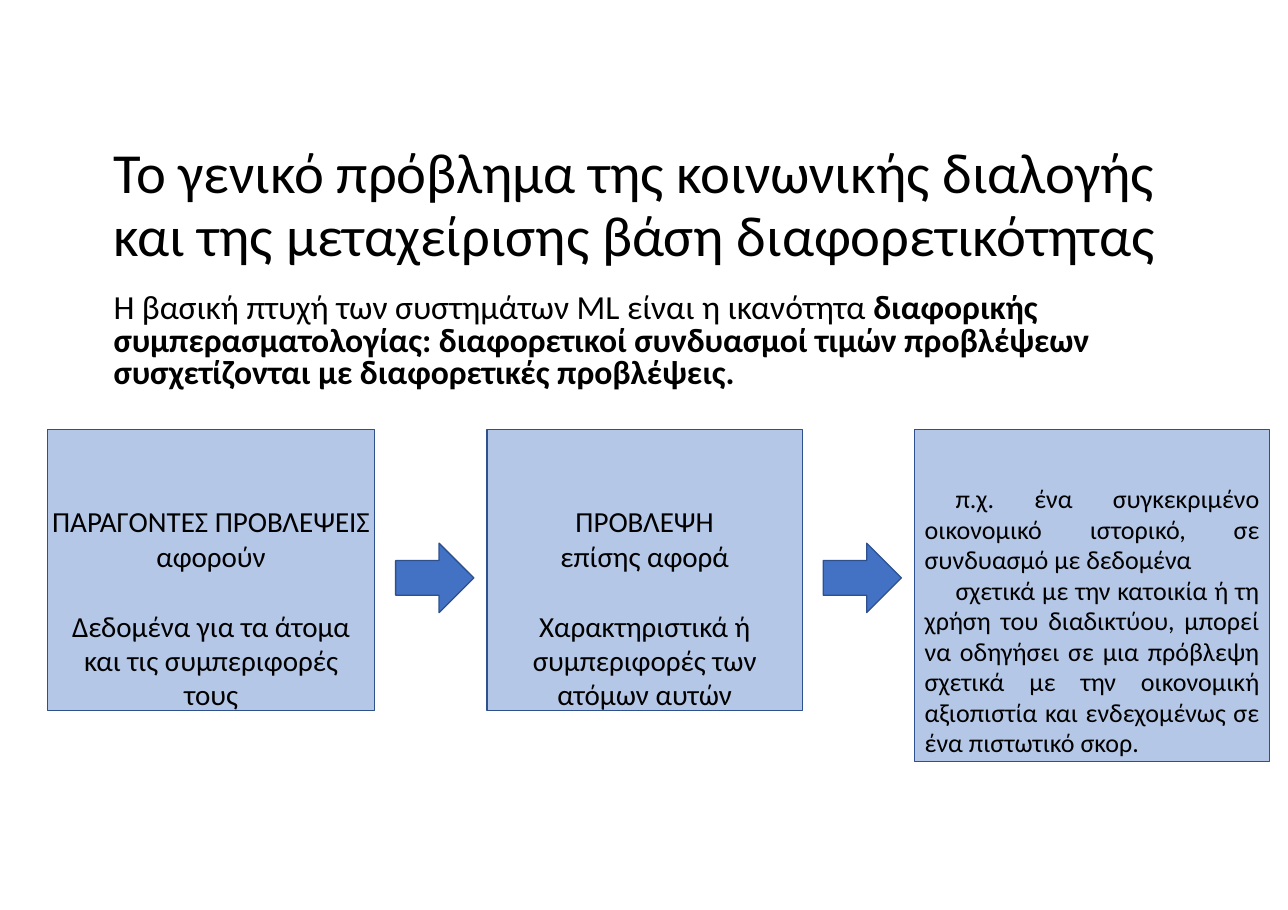
"""Build the slide on social sorting and prediction in ML systems."""
from dataclasses import dataclass

from pptx import Presentation
from pptx.dml.color import RGBColor
from pptx.enum.shapes import MSO_SHAPE
from pptx.enum.text import MSO_ANCHOR, MSO_AUTO_SIZE, PP_ALIGN
from pptx.util import Inches, Pt

RECTANGLE, ARROW = MSO_SHAPE.RECTANGLE, MSO_SHAPE.RIGHT_ARROW
LEFT, CENTER, JUSTIFY = PP_ALIGN.LEFT, PP_ALIGN.CENTER, PP_ALIGN.JUSTIFY
TOP, NO_FIT = MSO_ANCHOR.TOP, MSO_AUTO_SIZE.NONE

HEADLINE = "Το γενικό πρόβλημα της κοινωνικής διαλογής και της μεταχείρισης βάση διαφορετικότητας"
KEY_POINT = [
    ("Η βασική πτυχή των συστημάτων ML είναι η ικανότητα ", False),
    ("διαφορικής συμπερασματολογίας: διαφορετικοί συνδυασμοί τιμών προβλέψεων "
     "συσχετίζονται με διαφορετικές προβλέψεις.", True),
]
STAGES = [
    {"columns": 25.41, "margin": 0.2, "lines": [
        "ΠΑΡΑΓΟΝΤΕΣ ΠΡΟΒΛΕΨΕΙΣ", "αφορούν",
        "Δεδομένα για τα άτομα και τις συμπεριφορές τους"]},
    {"columns": 24.47, "margin": 0.24, "lines": [
        "ΠΡΟΒΛΕΨΗ", "επίσης αφορά",
        "Χαρακτηριστικά ή συμπεριφορές των ατόμων αυτών"]},
]
EXAMPLE_COLUMNS = 27.54
EXAMPLE = [
    "π.χ. ένα συγκεκριμένο οικονομικό ιστορικό, σε συνδυασμό με δεδομένα",
    "σχετικά με την κατοικία ή τη χρήση του διαδικτύου, μπορεί να οδηγήσει σε μια "
    "πρόβλεψη σχετικά με την οικονομική αξιοπιστία και ενδεχομένως σε ένα πιστωτικό σκορ.",
]


@dataclass(frozen=True)
class Theme:
    font: str = "Calibri"
    ink: RGBColor = RGBColor(0, 0, 0)
    box: RGBColor = RGBColor(0xB4, 0xC7, 0xE7)
    arrow: RGBColor = RGBColor(0x43, 0x71, 0xC4)
    edge: RGBColor = RGBColor(0x2E, 0x51, 0x8E)
    edge_width: float = 0.85
    title: float = 37
    body: float = 22
    stage: float = 19
    example: float = 17


THEME = Theme()
WIDTH, HEIGHT = Inches(11.69), Inches(8.26)
COLUMN, ROW = WIDTH / 100, HEIGHT / 100
TITLE_AREA = (6.59, 14.04, 86.83, 15.5)
KEY_POINT_AREA = (8.73, 31.23, 76.65, 11.86)
FLOW_LEFT, FLOW_TOP, FLOW_GAP = 3.68, 47.22, 8.73
STAGE_ROWS, EXAMPLE_ROWS = 30.87, 36.44
ARROW_TOP, ARROW_COLUMNS, ARROW_ROWS, ARROW_SHIFT = 59.69, 6.07, 7.63, 0.3


def place(left, top, columns, rows):
    return [round(n) for n in (left * COLUMN, top * ROW, columns * COLUMN, rows * ROW)]


def prepare(frame, left=0, top=0, right=0):
    frame.word_wrap = True
    frame.auto_size = NO_FIT
    frame.vertical_anchor = TOP
    frame.margin_left, frame.margin_top = Inches(left), Inches(top)
    frame.margin_right, frame.margin_bottom = Inches(right), 0


def style(paragraph, size, align, before=0, spacing=None):
    paragraph.font.name = THEME.font
    paragraph.font.size = Pt(size)
    paragraph.font.color.rgb = THEME.ink
    paragraph.alignment = align
    paragraph.space_before = Pt(before)
    paragraph.line_spacing = spacing


def indent(paragraph, **lengths):
    for attribute, inches in lengths.items():
        paragraph._p.get_or_add_pPr().set(attribute, str(Inches(inches)))


def add_figure(slide, preset, fill, *area):
    figure = slide.shapes.add_shape(preset, *place(*area))
    figure.shadow.inherit = False
    figure.fill.solid()
    figure.fill.fore_color.rgb = fill
    figure.line.color.rgb = THEME.edge
    figure.line.width = Pt(THEME.edge_width)
    return figure


def write_lines(frame, lines):
    frame.text = "\n".join(lines)
    return frame.paragraphs


def add_header(slide):
    title = slide.shapes.title
    title.left, title.top, title.width, title.height = place(*TITLE_AREA)
    prepare(title.text_frame, left=0.26, top=0.13)
    title.text_frame.text = HEADLINE
    style(title.text_frame.paragraphs[0], THEME.title, LEFT, 5.2, Pt(41))

    frame = slide.shapes.add_textbox(*place(*KEY_POINT_AREA)).text_frame
    prepare(frame, left=0.01, top=0.09)
    statement = frame.paragraphs[0]
    style(statement, THEME.body, LEFT, 6.4, 0.8)
    for words, bold in KEY_POINT:
        run = statement.add_run()
        run.text = words
        run.font.bold = bold


def add_flow(slide):
    left = FLOW_LEFT
    for stage in STAGES:
        box = add_figure(slide, RECTANGLE, THEME.box, left, FLOW_TOP, stage["columns"], STAGE_ROWS)
        prepare(box.text_frame, top=0.67)
        heading, link, detail = write_lines(box.text_frame, stage["lines"])
        style(heading, THEME.stage, CENTER)
        style(link, THEME.stage, CENTER, 0.2)
        style(detail, THEME.stage, CENTER, 23.5, Pt(22.1))
        indent(detail, marL=stage["margin"], marR=stage["margin"])

        left += stage["columns"] + FLOW_GAP
        arrow_left = left - (FLOW_GAP + ARROW_COLUMNS) / 2 + ARROW_SHIFT
        add_figure(slide, ARROW, THEME.arrow, arrow_left, ARROW_TOP, ARROW_COLUMNS, ARROW_ROWS)

    box = add_figure(slide, RECTANGLE, THEME.box, left, FLOW_TOP, EXAMPLE_COLUMNS, EXAMPLE_ROWS)
    prepare(box.text_frame, left=0.09, top=0.49, right=0.09)
    for paragraph in write_lines(box.text_frame, EXAMPLE):
        style(paragraph, THEME.example, JUSTIFY, spacing=Pt(19.9))
        indent(paragraph, indent=0.28)


def main():
    deck = Presentation()
    deck.slide_width, deck.slide_height = WIDTH, HEIGHT
    slide = deck.slides.add_slide(deck.slide_layouts[5])
    add_header(slide)
    add_flow(slide)
    deck.save("out.pptx")


if __name__ == "__main__":
    main()
